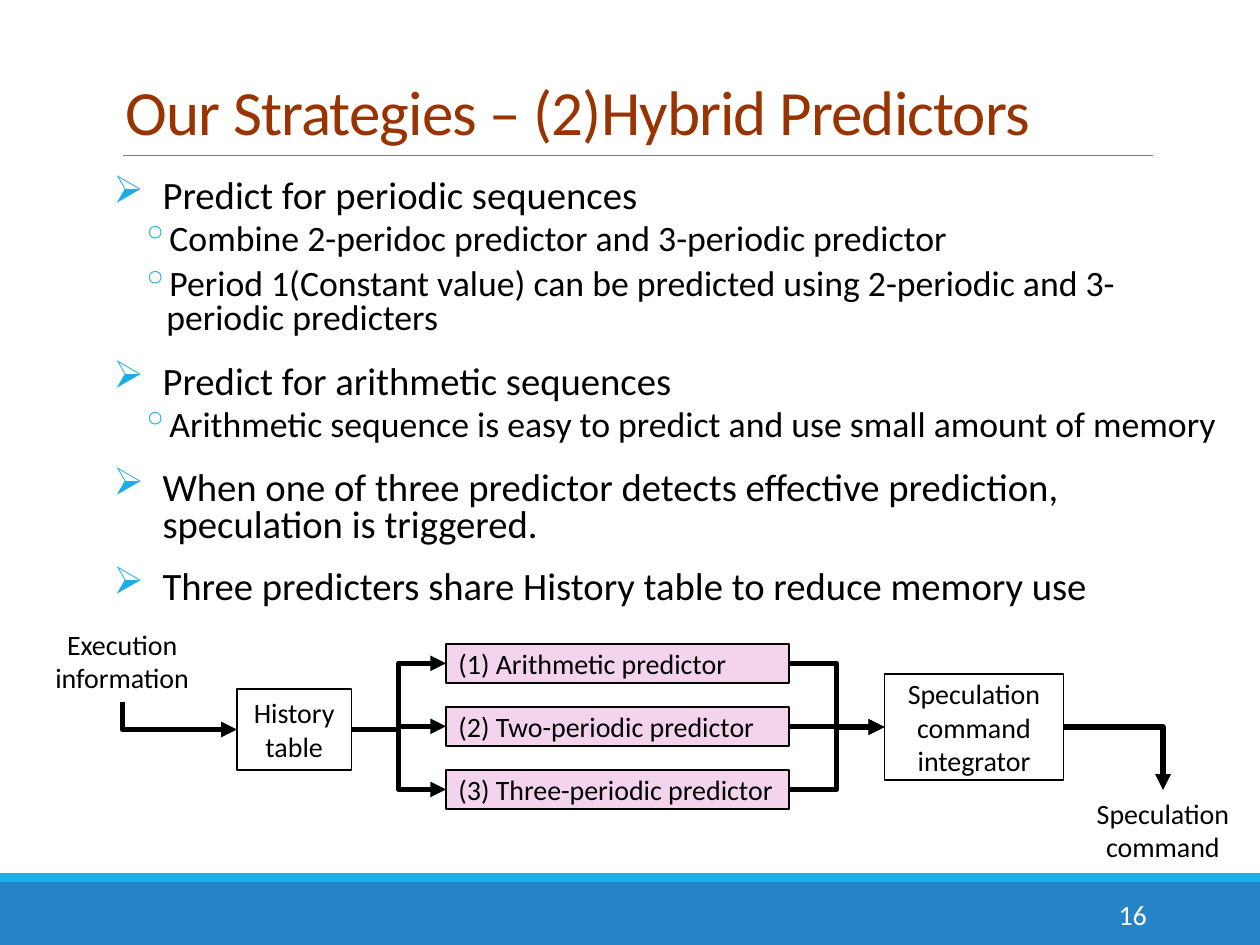
from lxml import etree
from pptx import Presentation
from pptx.dml.color import RGBColor
from pptx.enum.shapes import MSO_CONNECTOR, MSO_SHAPE
from pptx.enum.text import MSO_ANCHOR, PP_ALIGN
from pptx.oxml.ns import qn
from pptx.util import Inches, Pt

RECT = MSO_SHAPE.RECTANGLE
STRAIGHT, ELBOW = MSO_CONNECTOR.STRAIGHT, MSO_CONNECTOR.ELBOW
TOP, MIDDLE, BOTTOM = MSO_ANCHOR.TOP, MSO_ANCHOR.MIDDLE, MSO_ANCHOR.BOTTOM
LEFT, CENTER, RIGHT = PP_ALIGN.LEFT, PP_ALIGN.CENTER, PP_ALIGN.RIGHT

BLACK, WHITE, PINK = "000000", "FFFFFF", "F4D4ED"
SKY, BLUE, GRAY, BROWN = "1CADE4", "2683C6", "808080", "993300"

TITLE = "Our Strategies – (2)Hybrid Predictors"
PAGE = "16"
POINTS = [
    (0, "Predict for periodic sequences"),
    (1, "Combine 2-peridoc predictor and 3-periodic predictor"),
    (1, "Period 1(Constant value) can be predicted using 2-periodic and 3-periodic predicters"),
    (0, "Predict for arithmetic sequences"),
    (1, "Arithmetic sequence is easy to predict and use small amount of memory"),
    (0, "When one of three predictor detects effective prediction, speculation is triggered."),
    (0, "Three predicters share History table to reduce memory use"),
]
LEVELS = [
    dict(size=22.1, bullet="➢", margin=0.39, hang=0.39, before=12, after=2),
    dict(size=20.4, bullet="◦", margin=0.42, hang=0.2, before=2, after=4),
]
PREDICTORS = ["(1) Arithmetic predictor", "(2) Two-periodic predictor", "(3) Three-periodic predictor"]
HISTORY = ["History", "table"]
INTEGRATOR = ["Speculation", "command integrator"]
EXECUTION = ["Execution", "information"]
COMMAND = ["Speculation", "command"]

WIDTH, HEIGHT = 10, 7.5
FOOTER_TOP, STRIPE = 7, 0.07
MARGIN, CONTENT_WIDTH, RULE_Y = 0.9, 8.25, 1.23
PREDICTOR_TOP, PREDICTOR_PITCH = 5.11, 0.5
PREDICTOR_LEFT, PREDICTOR_WIDTH, PREDICTOR_HEIGHT = 3.54, 2.72, 0.31
HISTORY_BOX = (1.88, 5.47, 0.91, 0.64)
INTEGRATOR_BOX = (7.02, 5.35, 1.42, 0.84)
EXECUTION_BOX = (0.27, 4.93, 1.4, 0.64)
COMMAND_BOX = (8.6, 6.27, 1.26, 0.64)

prs = Presentation()
prs.slide_width, prs.slide_height = Inches(WIDTH), Inches(HEIGHT)
slide = prs.slides.add_slide(prs.slide_layouts[6])


def color(value):
    return RGBColor.from_string(value)


def write(frame, lines, size=16, ink=BLACK, align=CENTER, anchor=MIDDLE, wrap=True):
    frame.word_wrap = wrap
    frame.vertical_anchor = anchor
    for i, line in enumerate(lines):
        paragraph = frame.paragraphs[0] if i == 0 else frame.add_paragraph()
        paragraph.alignment = align
        add_run(paragraph, line, size, ink)


def add_run(paragraph, words, size, ink):
    run = paragraph.add_run()
    run.text = words
    run.font.name, run.font.size = "Calibri", Pt(size)
    run.font.color.rgb = color(ink)


def box(place, fill, outline=None):
    shape = slide.shapes.add_shape(RECT, *map(Inches, place))
    shape.shadow.inherit = False
    shape.fill.solid()
    shape.fill.fore_color.rgb = color(fill)
    if outline:
        shape.line.color.rgb = color(outline)
        shape.line.width = Pt(1)
    else:
        shape.line.fill.background()
    return shape.text_frame


def label(place):
    return slide.shapes.add_textbox(*map(Inches, place)).text_frame


def connect(kind, start, end, ink, weight, arrow=None, geometry=None):
    line = slide.shapes.add_connector(kind, *map(Inches, (*start, *end)))
    line.line.color.rgb = color(ink)
    line.line.width = Pt(weight)
    properties = line._element.spPr
    if arrow:
        etree.SubElement(properties.find(qn("a:ln")), qn(arrow), type="triangle")
    if geometry:
        properties.find(qn("a:prstGeom")).set("prst", geometry)
    etree.SubElement(properties, qn("a:effectLst"))


def flow(start, end, arrow="a:tailEnd", geometry=None):
    connect(ELBOW, start, end, BLACK, 3, arrow, geometry)


def left_of(place):
    return place[0], place[1] + place[3] / 2


def right_of(place):
    return place[0] + place[2], place[1] + place[3] / 2


def add_bullet(paragraph, level):
    properties = paragraph._p.get_or_add_pPr()
    properties.set("marL", str(Inches(level["margin"])))
    properties.set("indent", str(-Inches(level["hang"])))
    tint = etree.SubElement(properties, qn("a:buClr"))
    etree.SubElement(tint, qn("a:srgbClr"), val=SKY)
    etree.SubElement(properties, qn("a:buChar"), char=level["bullet"])


box((0, FOOTER_TOP, WIDTH, HEIGHT - FOOTER_TOP), BLUE)
box((0, FOOTER_TOP - STRIPE, WIDTH, STRIPE), SKY)
connect(STRAIGHT, (0.98, RULE_Y), (MARGIN + CONTENT_WIDTH, RULE_Y), GRAY, 0.5)

title = label((MARGIN, 0.26, CONTENT_WIDTH, 0.97))
write(title, [TITLE], 36, BROWN, LEFT, BOTTOM)
title.paragraphs[0].line_spacing = 0.85
title.paragraphs[0].runs[0].font._element.set("spc", "-50")

body = label((MARGIN, 1.38, 8.85, 3.56))
body.word_wrap = True
body.margin_left = body.margin_right = 0
for i, (depth, words) in enumerate(POINTS):
    level = LEVELS[depth]
    point = body.paragraphs[0] if i == 0 else body.add_paragraph()
    point.level = depth
    point.line_spacing = 0.8
    point.space_before, point.space_after = Pt(level["before"]), Pt(level["after"])
    add_bullet(point, level)
    add_run(point, words, level["size"], BLACK)

write(label((8.12, 7.06, 1.08, 0.4)), [PAGE], ink=WHITE, align=RIGHT)

write(box(HISTORY_BOX, WHITE, BLACK), HISTORY)
write(box(INTEGRATOR_BOX, WHITE, BLACK), INTEGRATOR)
write(label(EXECUTION_BOX), EXECUTION, anchor=TOP)
write(label(COMMAND_BOX), COMMAND, anchor=TOP, wrap=False)

for row, name in enumerate(PREDICTORS):
    place = (PREDICTOR_LEFT, PREDICTOR_TOP + row * PREDICTOR_PITCH, PREDICTOR_WIDTH, PREDICTOR_HEIGHT)
    write(box(place, PINK, BLACK), [name], align=LEFT)
    flow(right_of(HISTORY_BOX), left_of(place))
    flow(right_of(place), left_of(INTEGRATOR_BOX))

execution_foot = (EXECUTION_BOX[0] + EXECUTION_BOX[2] / 2, EXECUTION_BOX[1] + EXECUTION_BOX[3])
command_head = (COMMAND_BOX[0] + COMMAND_BOX[2] / 2, COMMAND_BOX[1])
flow(left_of(HISTORY_BOX), execution_foot, "a:headEnd", "bentConnector2")
flow(right_of(INTEGRATOR_BOX), command_head, geometry="bentConnector2")

prs.save("out.pptx")
